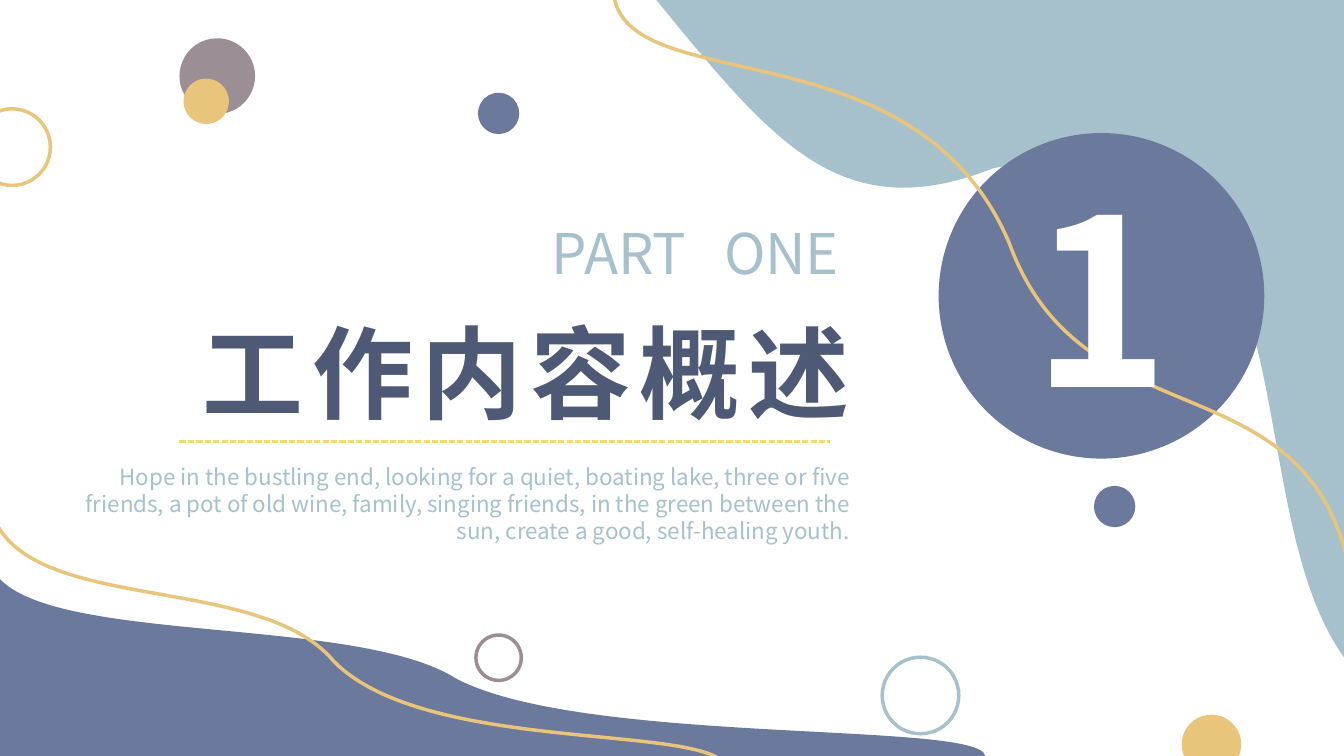
from collections import namedtuple

from lxml.etree import SubElement
from pptx import Presentation
from pptx.dml.color import RGBColor
from pptx.enum.dml import MSO_LINE
from pptx.enum.shapes import MSO_CONNECTOR, MSO_SHAPE
from pptx.enum.text import MSO_ANCHOR, MSO_AUTO_SIZE, PP_ALIGN
from pptx.oxml.ns import qn
from pptx.util import Inches, Pt

Box = namedtuple("Box", "left top width height")

WIDE, HIGH = 13.33, 7.5
FONT = "Noto Sans CJK SC"
SKY, NAVY, GOLD, MAUVE = "A6C1CC", "6B799C", "E9C57B", "9B8E95"
INK, DASH, WHITE = "4E5976", "F4D973", "FFFFFF"


def colour(value):
    return RGBColor.from_string(value)


def paint(shape, fill=None, line=None):
    """Give a shape a plain fill or a plain outline, without shadow."""
    shape.shadow.inherit = False
    if fill:
        shape.fill.solid()
        shape.fill.fore_color.rgb = colour(fill)
    else:
        shape.fill.background()
    if line:
        shape.line.color.rgb = colour(line)
        shape.line.width = Pt(2.5)
    else:
        shape.line.fill.background()


def wave(page, box, start, *parts, **style):
    """Closed outline; a part is one point (line) or three points (curve)."""
    points = [start] + [point for part in parts for point in part]
    spots = [(Inches(box.left + x), Inches(box.top + y)) for x, y in points]
    builder = page.shapes.build_freeform(*spots[0])
    builder.add_line_segments(spots[1:], close=True)
    shape = builder.convert_to_shape()

    # Merge each group of three segments into one cubic curve
    segments = iter(list(shape._element.iter(qn("a:lnTo"))))
    for part in parts:
        segment = next(segments)
        if len(part) == 3:
            segment.tag = qn("a:cubicBezTo")
            for _ in range(2):
                spare = next(segments)
                segment.append(spare[0])
                spare.getparent().remove(spare)
    paint(shape, **style)


def circle(page, left, top, size, **style):
    shape = page.shapes.add_shape(
        MSO_SHAPE.OVAL, Inches(left), Inches(top), Inches(size), Inches(size))
    paint(shape, **style)


def write(shape, text, size, ink, align=PP_ALIGN.RIGHT, bold=False, spacing=0):
    frame = shape.text_frame
    frame.word_wrap = True
    frame.auto_size = MSO_AUTO_SIZE.SHAPE_TO_FIT_TEXT
    frame.vertical_anchor = MSO_ANCHOR.TOP
    para = frame.paragraphs[0]
    para.alignment = align
    span = para.add_run()
    span.text = text
    span.font.name = FONT
    span.font.size = Pt(size)
    span.font.bold = bold
    span.font.color.rgb = colour(ink)
    properties = span.font._element
    if spacing:
        properties.set("spc", str(spacing * 100))
    SubElement(properties, qn("a:ea")).set("typeface", FONT)


def text_box(page, box, text, size, ink, **style):
    shape = page.shapes.add_textbox(*map(Inches, box))
    write(shape, text, size, ink, **style)


def number_corner(page, box):
    """Upper right: sky wave, number disc and the gold thread through it."""
    wave(page, box, (box.width, 0), [(0, 0)],
         ((1.17, 1.43), (1.84, 2.26), (3.34, 1.67)),
         ((6.69, 0.99), (5.66, 4.9), (box.width, box.height)), fill=SKY)
    circle(page, box.left + 2.8, box.top + 1.32, 3.23, fill=NAVY)
    thread = Box(box.left - 0.43, box.top - 0.13, 7.36, 6.14)
    wave(page, thread, (3.93, 2.54),
         ((4.7, 4.66), (7.1, 3.55), (thread.width, thread.height)),
         [(thread.width, 0)], [(0, 0)],
         ((0.02, 1.16), (2.98, 0.31), (3.93, 2.54)), line=GOLD)
    text_box(page, Box(box.left + 2.99, box.top + 1.49, 2.85, 2.89), "1", 166,
             WHITE, align=PP_ALIGN.CENTER, bold=True, spacing=6)


def heading(page, box):
    """Middle: part label, title, dashed rule and summary."""
    title = page.shapes.title
    title.left, title.top = Inches(box.left + 0.43), Inches(box.top + 0.91)
    title.width, title.height = Inches(box.width - 0.43), Inches(1.31)
    write(title, "工作内容概述", 72, INK, bold=True, spacing=6)

    text_box(page, Box(box.left, box.top + 2.43, box.width, 0.91),
             "Hope in the bustling end, looking for a quiet, boating lake, "
             "three or five friends, a pot of old wine, family, singing "
             "friends, in the green between the sun, create a good, "
             "self-healing youth.", 16, SKY)
    text_box(page, Box(box.left + 4.26, box.top, 3.43, 0.77),
             "PART   ONE", 40, SKY)

    level = Inches(box.top + 2.26)
    rule = page.shapes.add_connector(
        MSO_CONNECTOR.STRAIGHT, Inches(box.left + 1.05), level,
        Inches(box.left + 7.5), level)
    rule.line.color.rgb = colour(DASH)
    rule.line.width = Pt(1.5)
    rule.line.dash_style = MSO_LINE.SQUARE_DOT
    SubElement(rule._element.spPr, qn("a:effectLst"))


def bubbles(page, box):
    """Dots and rings scattered over the box."""
    for left, top, size, style in (
        (4.72, 6.3, 0.45, {"line": MAUVE}),
        (8.75, 6.52, 0.76, {"line": SKY}),
        (11.72, 7.09, 0.59, {"fill": GOLD}),
        (4.74, 0.92, 0.41, {"fill": NAVY}),
        (1.78, 0.38, 0.75, {"fill": MAUVE}),
        (-0.26, 1.08, 0.76, {"line": GOLD}),
        (1.82, 0.78, 0.45, {"fill": GOLD}),
        (10.85, 4.82, 0.41, {"fill": NAVY}),
    ):
        circle(page, box.left + left, box.top + top, size, **style)


def bottom_corner(page, box):
    """Lower left: navy wave and the gold thread over it."""
    wave(page, box, (4.6, 1.1),
         ((3.57, 0.45), (0.36, 0.79), (0, 0)),
         [(0, box.height)], [(box.width, box.height)],
         ((9.82, 1.52), (5.86, 1.77), (4.6, 1.1)), fill=NAVY)
    thread = Box(box.left - 0.02, box.top - 0.61, 7.32, 2.63)
    wave(page, thread, (3.41, 1.54),
         ((2.65, 0.63), (0.26, 1.11), (0, 0)),
         [(0, thread.height)], [(thread.width, thread.height)],
         ((7.29, 2.13), (4.35, 2.5), (3.41, 1.54)), line=GOLD)


def main():
    deck = Presentation()
    deck.slide_width, deck.slide_height = Inches(WIDE), Inches(HIGH)
    page = deck.slides.add_slide(deck.slide_layouts[5])
    page.background.fill.solid()
    page.background.fill.fore_color.rgb = colour(WHITE)

    number_corner(page, Box(WIDE - 6.82, 0, 6.82, 6.52))
    heading(page, Box(0.73, 2.12, 7.8, 3.34))
    bubbles(page, Box(0, 0, WIDE, HIGH))
    bottom_corner(page, Box(-0.08, HIGH - 1.87, 9.85, 1.87))
    deck.save("out.pptx")


if __name__ == "__main__":
    main()
